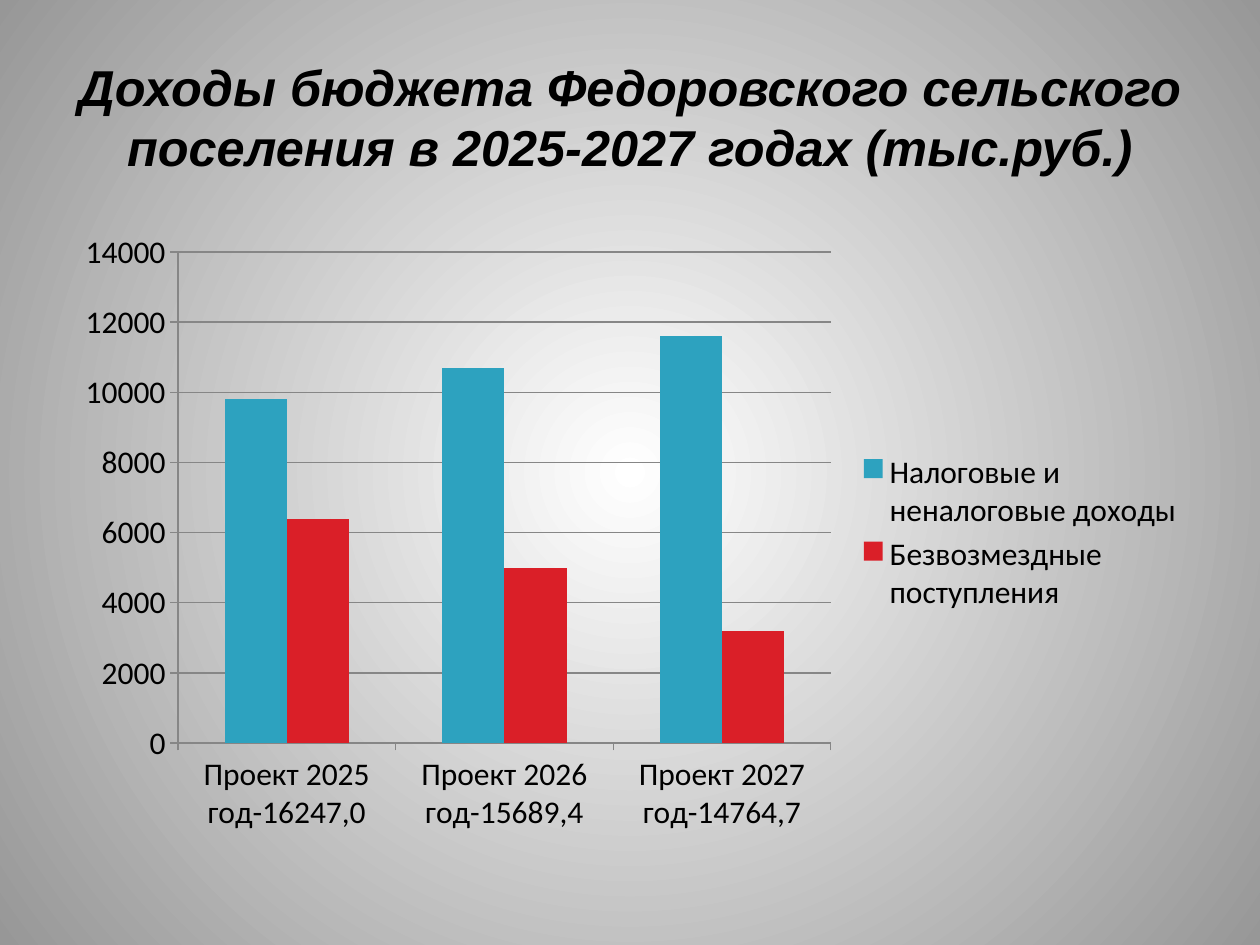
import lxml.etree
import pptx
import pptx.chart.data
import pptx.dml.color
import pptx.enum.chart
import pptx.enum.text
import pptx.oxml.ns
import pptx.util
from pptx.util import Inches


def color(hex_string):
    return pptx.dml.color.RGBColor.from_string(hex_string)


presentation = pptx.Presentation()
presentation.slide_width = Inches(10)
presentation.slide_height = Inches(7.5)
slide = presentation.slides.add_slide(presentation.slide_layouts[5])

# Background: circular gradient from a white centre to grey
fill = slide.background.fill
fill.gradient()
for stop, position, shade in zip(fill.gradient_stops, (0, 1), ("FFFFFF", "979797")):
    stop.position = position
    stop.color.rgb = color(shade)
qn = pptx.oxml.ns.qn
gradient = next(slide.element.iter(qn("a:gradFill")))
gradient.remove(gradient.find(qn("a:lin")))
circle = lxml.etree.SubElement(gradient, qn("a:path"))
circle.set("path", "circle")
center = lxml.etree.SubElement(circle, qn("a:fillToRect"))
for side in "ltrb":
    center.set(side, "50000")

# Title
title = slide.shapes.title
title.left, title.top = Inches(0.5), Inches(0.3)
title.width, title.height = Inches(9), Inches(1.25)
title.text_frame.text = "Доходы бюджета Федоровского сельского поселения в 2025-2027 годах (тыс.руб.)"
title.text_frame.word_wrap = True
title.text_frame.vertical_anchor = pptx.enum.text.MSO_ANCHOR.MIDDLE
paragraph = title.text_frame.paragraphs[0]
paragraph.alignment = pptx.enum.text.PP_ALIGN.CENTER
paragraph.font.name = "Arial"
paragraph.font.size = pptx.util.Pt(28.8)
paragraph.font.bold = True
paragraph.font.italic = True
paragraph.font.color.rgb = color("000000")

# Chart data
chart_data = pptx.chart.data.CategoryChartData(number_format="0")
chart_data.categories = [
    "Проект 2025 год-16247,0",
    "Проект 2026 год-15689,4",
    "Проект 2027 год-14764,7",
]
chart_data.add_series("Налоговые и неналоговые доходы", (9800, 10700, 11600))
chart_data.add_series("Безвозмездные поступления", (6400, 5000, 3200))

# Chart
chart = slide.shapes.add_chart(
    pptx.enum.chart.XL_CHART_TYPE.COLUMN_CLUSTERED,
    Inches(0.5), Inches(1.75), Inches(9), Inches(4.95), chart_data,
).chart
chart.has_title = False
chart.font.name = "Calibri"
chart.font.size = pptx.util.Pt(18)
chart.font.color.rgb = color("000000")

# Columns
plot = chart.plots[0]
plot.gap_width = 150
plot.overlap = 0
plot.vary_by_categories = False
for series, shade in zip(plot.series, ("2DA2BF", "DA1F28")):
    series.format.fill.solid()
    series.format.fill.fore_color.rgb = color(shade)

# Axes and gridlines
value_axis = chart.value_axis
value_axis.minimum_scale = 0
value_axis.maximum_scale = 14000
value_axis.major_unit = 2000
value_axis.has_major_gridlines = True
value_axis.tick_labels.number_format = "0"
value_axis.tick_labels.number_format_is_linked = False
for axis in (chart.category_axis, value_axis):
    axis.major_tick_mark = pptx.enum.chart.XL_TICK_MARK.OUTSIDE
for line_owner in (chart.category_axis, value_axis, value_axis.major_gridlines):
    line_owner.format.line.color.rgb = color("868686")
    line_owner.format.line.width = pptx.util.Pt(0.75)

# Legend
chart.has_legend = True
chart.legend.position = pptx.enum.chart.XL_LEGEND_POSITION.RIGHT
chart.legend.include_in_layout = False

presentation.save("out.pptx")
